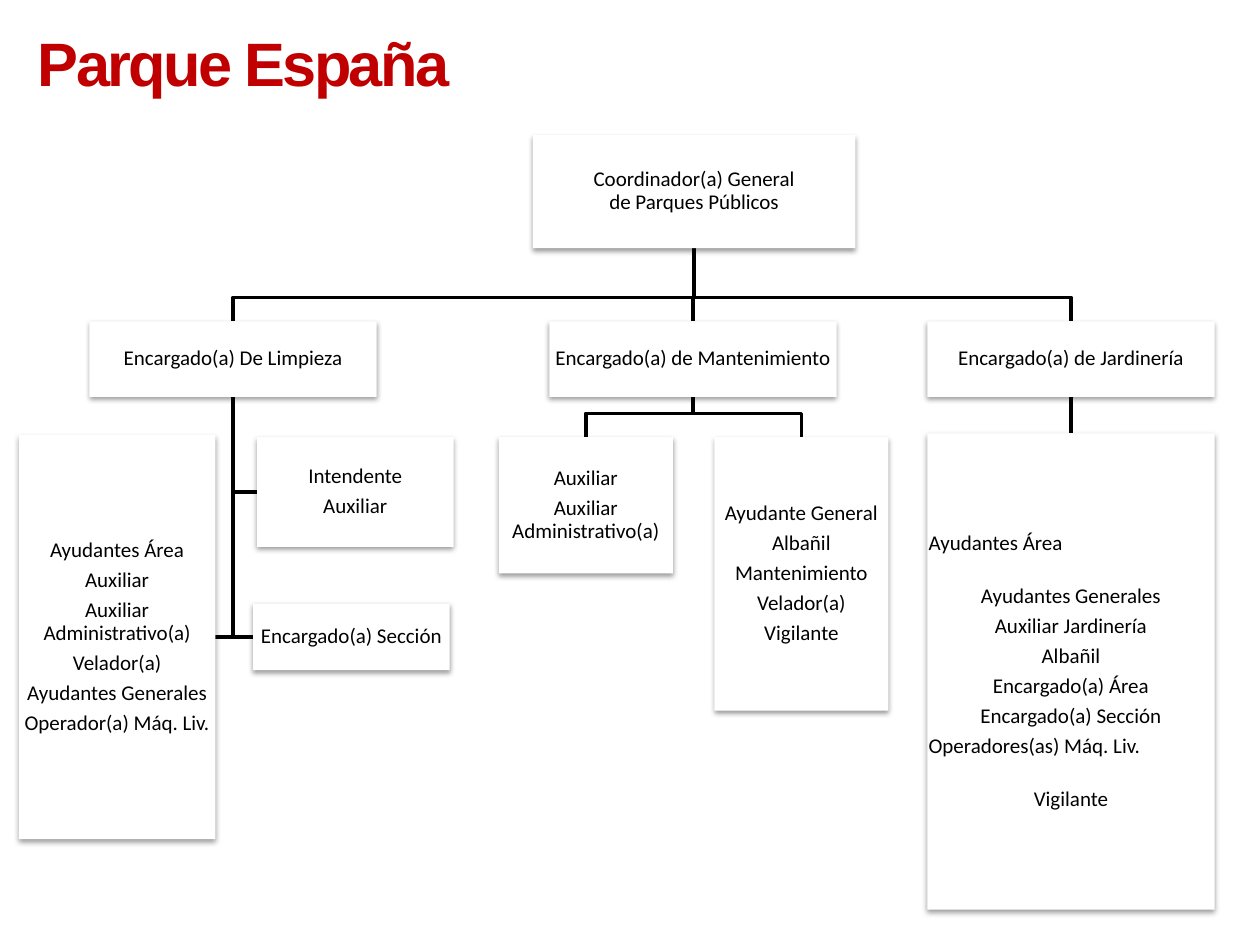
from dataclasses import dataclass

from lxml import etree
from pptx import Presentation
from pptx.dml.color import RGBColor
from pptx.enum.shapes import MSO_CONNECTOR, MSO_SHAPE
from pptx.enum.text import MSO_ANCHOR, MSO_AUTO_SIZE, PP_ALIGN
from pptx.oxml import parse_xml
from pptx.oxml.ns import nsdecls, qn
from pptx.util import Inches, Pt

RECTANGLE = MSO_SHAPE.RECTANGLE
STRAIGHT = MSO_CONNECTOR.STRAIGHT
TOP, MIDDLE = MSO_ANCHOR.TOP, MSO_ANCHOR.MIDDLE
LEFT, CENTER = PP_ALIGN.LEFT, PP_ALIGN.CENTER
NO_AUTOFIT = MSO_AUTO_SIZE.NONE
SIDE_TOP, SIDE_BOTTOM = 0, 2

WIDTH, HEIGHT = Inches(10), Inches(7.5)
COLUMNS, ROWS = 100, 75
BUS_GAP = 1.9


@dataclass(frozen=True)
class Theme:
    red: RGBColor = RGBColor(0xC0, 0, 0)
    ink: RGBColor = RGBColor(0, 0, 0)
    paper: RGBColor = RGBColor(255, 255, 255)
    title_font: str = "Arial"
    body_font: str = "Calibri"
    title_size: float = 35
    body_size: float = 12
    line_width: float = 2
    line_spacing: float = 0.9
    gap: float = 4.2
    wide_gap: float = 17.4


THEME = Theme()

MANAGER_TOP, MANAGER_SIZE = 25.5, (22.8, 6)
STAFF_TOP = 34.7

POSTS = {
    "coordinator": (42.3, 10.7, 25.6, 9, ["Coordinador(a) General\vde Parques Públicos"]),
    "cleaning": (7.1, MANAGER_TOP, *MANAGER_SIZE, ["Encargado(a) De Limpieza"]),
    "cleaning_staff": (1.5, 34.5, 15.6, 32.1, [
        "Ayudantes Área", "Auxiliar", "Auxiliar Administrativo(a)", "Velador(a)",
        "Ayudantes Generales", "Operador(a) Máq. Liv."]),
    "intendant": (20.4, STAFF_TOP, 15.6, 8.7, ["Intendente", "Auxiliar"]),
    "section": (20.1, 47.9, 15.6, 5.3, ["Encargado(a) Sección"]),
    "maintenance": (43.6, MANAGER_TOP, *MANAGER_SIZE, ["Encargado(a) de Mantenimiento"]),
    "maintenance_office": (39.6, STAFF_TOP, 13.8, 10.8, [
        "Auxiliar", "Auxiliar Administrativo(a)"]),
    "maintenance_staff": (56.7, STAFF_TOP, 13.8, 21.7, [
        "Ayudante General", "Albañil", "Mantenimiento", "Velador(a)", "Vigilante"]),
    "gardening": (73.6, MANAGER_TOP, *MANAGER_SIZE, ["Encargado(a) de Jardinería"]),
    "gardening_staff": (73.6, 34.4, 22.8, 37.8, [
        "Ayudantes Área", "Ayudantes Generales", "Auxiliar Jardinería", "Albañil",
        "Encargado(a) Área", "Encargado(a) Sección", "Operadores(as) Máq. Liv.",
        "Vigilante"]),
}

LEFT_ALIGNED = {"gardening_staff": {"Ayudantes Área", "Operadores(as) Máq. Liv."}}

BRANCHES = {
    "coordinator": ["cleaning", "maintenance", "gardening"],
    "maintenance": ["maintenance_office", "maintenance_staff"],
}
SIDE_BRANCHES = {"cleaning": ["cleaning_staff", "intendant", "section"]}


def col(count):
    return round(count * WIDTH / COLUMNS)


def row(count):
    return round(count * HEIGHT / ROWS)


def style_line(line):
    line.color.rgb = THEME.ink
    line.width = Pt(THEME.line_width)


def add_shadow(card):
    card.shadow.inherit = False
    effects = card._element.spPr.find(qn("a:effectLst"))
    effects.append(parse_xml(
        f'<a:outerShdw {nsdecls("a")} blurRad="{Pt(3.1)}" dist="{Pt(1.6)}" '
        'dir="5400000" rotWithShape="0">'
        f'<a:srgbClr val="{THEME.ink}"><a:alpha val="38000"/></a:srgbClr>'
        '</a:outerShdw>'))


def add_post(slide, left, top, width, height, roles, left_aligned):
    card = slide.shapes.add_shape(RECTANGLE, col(left), row(top), col(width), row(height))
    card.fill.solid()
    card.fill.fore_color.rgb = THEME.paper
    card.line.fill.background()
    add_shadow(card)
    frame = card.text_frame
    frame.word_wrap = True
    frame.vertical_anchor = MIDDLE
    frame.margin_left = frame.margin_right = Inches(0.01)
    frame.margin_top = frame.margin_bottom = Inches(0.01)
    for index, role in enumerate(roles):
        paragraph = frame.add_paragraph() if index else frame.paragraphs[0]
        at_left = role in left_aligned
        paragraph.alignment = LEFT if at_left else CENTER
        paragraph.line_spacing = THEME.line_spacing
        paragraph.space_after = Pt(THEME.wide_gap if at_left else THEME.gap)
        for number, text in enumerate(role.split("\v")):
            if number:
                paragraph.add_line_break()
            run = paragraph.add_run()
            run.text = text
            run.font.name = THEME.body_font
            run.font.size = Pt(THEME.body_size)
            run.font.color.rgb = THEME.ink
    return card


def add_route(slide, points):
    places = [(col(x), row(y)) for x, y in points]
    builder = slide.shapes.build_freeform(*places[0])
    builder.add_line_segments(places[1:], close=False)
    route = builder.convert_to_shape()
    route.fill.background()
    route.shadow.inherit = False
    style_line(route.line)


def bottom_center(post):
    left, top, width, height, _ = POSTS[post]
    return left + width / 2, top + height


def add_branch(slide, parent, child):
    start_x, start_y = bottom_center(parent)
    left, top, width, _, _ = POSTS[child]
    end_x, bus = left + width / 2, top - BUS_GAP
    add_route(slide, [(start_x, start_y), (start_x, bus), (end_x, bus), (end_x, top)])


def add_side_branch(slide, parent, child):
    trunk, start_y = bottom_center(parent)
    left, top, width, height, _ = POSTS[child]
    level = top + height / 2
    edge = left if left > trunk else left + width
    add_route(slide, [(trunk, start_y), (trunk, level), (edge, level)])


def add_link(slide, parent, child):
    link = slide.shapes.add_connector(STRAIGHT, 0, 0, 0, 0)
    link.begin_connect(parent, SIDE_BOTTOM)
    link.end_connect(child, SIDE_TOP)
    style_line(link.line)
    etree.SubElement(link._element.spPr, qn("a:effectLst"))


def add_title(slide, text):
    title = slide.shapes.title
    title.left, title.top, title.width, title.height = col(2), row(1.5), col(35.4), row(6.9)
    frame = title.text_frame
    frame.word_wrap = False
    frame.auto_size = NO_AUTOFIT
    frame.vertical_anchor = TOP
    paragraph = frame.paragraphs[0]
    paragraph.alignment = LEFT
    run = paragraph.add_run()
    run.text = text
    run.font.name = THEME.title_font
    run.font.size = Pt(THEME.title_size)
    run.font.bold = True
    run.font.color.rgb = THEME.red
    run.font._element.set("spc", "-150")


def main():
    deck = Presentation()
    deck.slide_width, deck.slide_height = WIDTH, HEIGHT
    slide = deck.slides.add_slide(deck.slide_layouts[5])
    add_title(slide, "Parque España")
    for branches, draw in ((BRANCHES, add_branch), (SIDE_BRANCHES, add_side_branch)):
        for parent, children in branches.items():
            for child in children:
                draw(slide, parent, child)
    cards = {post: add_post(slide, *details, LEFT_ALIGNED.get(post, set()))
             for post, details in POSTS.items()}
    add_link(slide, cards["gardening"], cards["gardening_staff"])
    deck.save("out.pptx")


if __name__ == "__main__":
    main()
